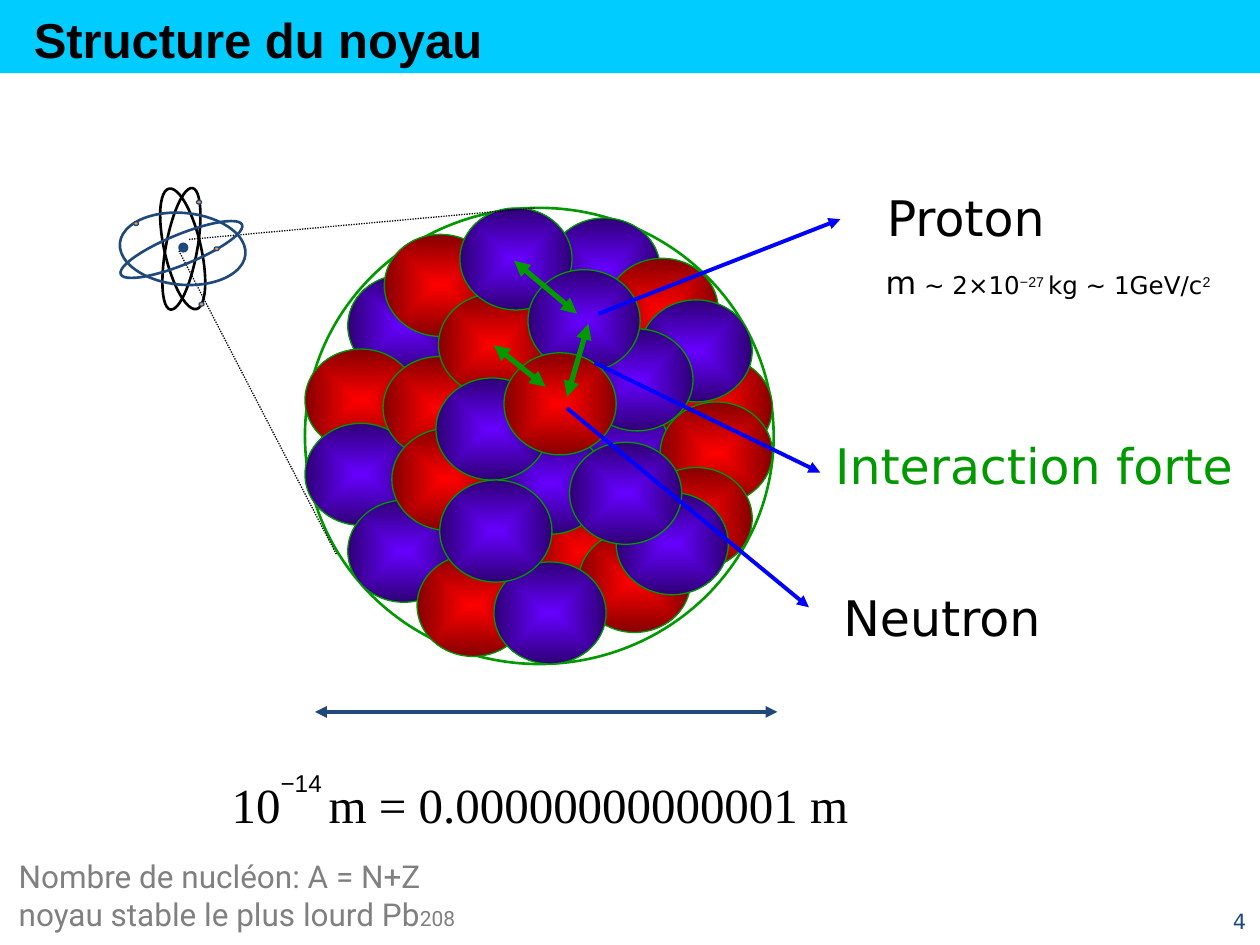
from pptx import Presentation
from pptx.dml.color import RGBColor
from pptx.enum.dml import MSO_LINE
from pptx.enum.shapes import MSO_CONNECTOR, MSO_SHAPE
from pptx.enum.text import MSO_ANCHOR, PP_ALIGN
from pptx.oxml.ns import qn
from pptx.util import Inches, Pt
from lxml import etree

RECT, OVAL, STRAIGHT = MSO_SHAPE.RECTANGLE, MSO_SHAPE.OVAL, MSO_CONNECTOR.STRAIGHT
LEFT, CENTER, RIGHT = PP_ALIGN.LEFT, PP_ALIGN.CENTER, PP_ALIGN.RIGHT
TOP, MIDDLE = MSO_ANCHOR.TOP, MSO_ANCHOR.MIDDLE
DOTTED = MSO_LINE.ROUND_DOT
COLS, ROWS = 100, 75
CELL = Inches(10) // COLS
SANS, ARIAL, SERIF, ROBOTO = "DejaVu Sans", "Arial", "Times New Roman", "Roboto"
COLORS = {
    "banner": "00CCFF", "black": "000000", "navy": "1F497D", "force": "009900",
    "pointer": "0000FF", "electron": "F79646", "grey": "808080",
    "proton": "6600FF", "proton_edge": "2F0076",
    "neutron": "FF0000", "neutron_edge": "860000",
}
NUCLEON = (8.9, 8.1)
NUCLEONS = [
    ("proton", 27.6, 21.8), ("neutron", 24.2, 27.7), ("proton", 24.2, 33.6),
    ("proton", 45.4, 32.6), ("proton", 43.5, 17.3), ("neutron", 30.5, 18.6),
    ("neutron", 30.4, 28.3), ("neutron", 41.9, 39.7), ("neutron", 46.1, 22.9),
    ("neutron", 34.8, 23.3), ("neutron", 52.4, 28.3), ("neutron", 48.1, 20.5),
    ("proton", 36.5, 16.5), ("proton", 50.8, 23.8), ("proton", 27.6, 39.7),
    ("proton", 46.1, 26.1), ("neutron", 31.1, 34), ("neutron", 45.9, 42.1),
    ("neutron", 33.1, 44), ("proton", 39.2, 34.3), ("proton", 39.2, 44.6),
    ("proton", 34.6, 30), ("neutron", 52.4, 31.9), ("neutron", 50.8, 37.1),
    ("proton", 48.9, 39.1), ("proton", 45.2, 35.1), ("proton", 41.9, 21.4),
    ("proton", 34.9, 38.1), ("neutron", 40, 28),
]
ORBITS_BEHIND = [
    ((9.5, 18.5, 9.8, 2.5), 280.3, "black"),
    ((9.6, 18.3, 9.8, 2.9), 257.1, "black"),
    ((9.2, 18.6, 10.4, 2.4), 337.8, "navy"),
]
ORBIT_FRONT = ((9.5, 16.9, 10, 5.7), 5.1, "navy")
ELECTRONS = [(15.6, 15.9), (17, 19.6), (10.6, 17.6), (15.8, 24)]
ZOOM_LINES = [((14.2, 19.9), (26.7, 44)), ((15, 19), (42.5, 16.5))]
FORCES = [((45, 31.5), (46.7, 25.7)), ((39.2, 27.4), (43.3, 30.7)),
          ((40.8, 20.7), (45.8, 24.9))]
POINTERS = [((45, 32.4), (64.2, 48.2)), ((47.5, 24.9), (66.7, 17.4)),
            ((47.2, 28.8), (65.1, 37.5))]
LABELS = [
    ("Neutron", (65.9, 46.1, 17.7, 5.7), "black", CENTER),
    ("Proton", (69.3, 14.4, 14.7, 5.7), "black", CENTER),
    ("Interaction forte", (65.3, 34.1, 34, 5.7), "force", LEFT),
]


def rgb(name):
    """Return the named colour."""
    return RGBColor.from_string(COLORS[name])


def grid(*cells):
    """Convert grid cells to slide lengths."""
    return [round(n * CELL) for n in cells]


def add_shape(s, kind, box, fill=None, line=None, width=0.75, rot=0):
    """Add a preset shape with optional solid fill and outline."""
    sp = s.shapes.add_shape(kind, *grid(*box))
    sp.shadow.inherit = False
    sp.rotation = rot
    if fill:
        sp.fill.solid()
        sp.fill.fore_color.rgb = rgb(fill)
    else:
        sp.fill.background()
    if line:
        sp.line.color.rgb = rgb(line)
        sp.line.width = Pt(width)
    else:
        sp.line.fill.background()
    return sp


def add_nucleon(s, kind, left, top):
    """Add a ball shaded from its centre to its edge."""
    sp = add_shape(s, OVAL, (left, top, *NUCLEON), line="force")
    sp.fill.gradient()
    for stop, name in zip(sp.fill.gradient_stops, (kind, f"{kind}_edge")):
        stop.color.rgb = rgb(name)
    grad = sp._element.spPr.find(qn("a:gradFill"))
    grad.remove(grad.find(qn("a:lin")))
    shade = etree.SubElement(grad, qn("a:path"), {"path": "shape"})
    etree.SubElement(shade, qn("a:fillToRect"), dict.fromkeys("ltrb", "50000"))


def add_line(s, start, end, color, width, dash=None, heads=()):
    """Add a straight line with optional dash and arrowheads."""
    ln = s.shapes.add_connector(STRAIGHT, *grid(*start, *end))
    ln.line.color.rgb = rgb(color)
    ln.line.width = Pt(width)
    if dash:
        ln.line.dash_style = dash
    for head in heads:
        etree.SubElement(ln.line._get_or_add_ln(), qn(f"a:{head}"), type="triangle")
    etree.SubElement(ln._element.spPr, qn("a:effectLst"))


def add_text(s, box, paragraphs, size=28, font=SANS, color="black", bold=False,
             align=LEFT, anchor=TOP, wrap=False, spacing=None):
    """Add paragraphs of (text, format) runs in a text box."""
    tf = s.shapes.add_textbox(*grid(*box)).text_frame
    tf.word_wrap = wrap
    tf.vertical_anchor = anchor
    for i, runs in enumerate(paragraphs):
        p = tf.paragraphs[0] if i == 0 else tf.add_paragraph()
        p.alignment = align
        if spacing:
            p.line_spacing = spacing
        for text, fmt in runs:
            r = p.add_run()
            r.text = text
            r.font.size = Pt(fmt.get("size", size))
            r.font.name = fmt.get("font", font)
            r.font.bold = bold
            r.font.color.rgb = rgb(color)
            if "raised" in fmt:
                r.font._element.set("baseline", str(fmt["raised"] * 1000))


def add_nucleus(s):
    """Draw the enclosing circle and its nucleons."""
    add_shape(s, OVAL, (24.2, 16.5, 37.2, 36.2), line="force", width=1.5)
    for nucleon in NUCLEONS:
        add_nucleon(s, *nucleon)


def add_orbit(s, box, rot, color):
    """Draw one tilted electron orbit."""
    add_shape(s, OVAL, box, line=color, width=1.5, rot=rot)


def add_atom(s):
    """Draw the small atom and the lines that enlarge its core."""
    for start, end in ZOOM_LINES:
        add_line(s, start, end, "black", 0.75, dash=DOTTED)
    for orbit in ORBITS_BEHIND:
        add_orbit(s, *orbit)
    add_shape(s, OVAL, (14.2, 19.3, 0.7, 0.7), fill="navy", line="navy")
    add_orbit(s, *ORBIT_FRONT)
    for left, top in ELECTRONS:
        add_shape(s, OVAL, (left, top, 0.4, 0.3), fill="electron", line="navy")


def add_annotations(s):
    """Draw the arrows and their labels."""
    both = ("headEnd", "tailEnd")
    for start, end in FORCES:
        add_line(s, start, end, "force", 3, heads=both)
    for start, end in POINTERS:
        add_line(s, start, end, "pointer", 2.25, heads=("tailEnd",))
    for text, box, color, align in LABELS:
        add_text(s, box, [[(text, {})]], color=color, align=align)
    add_line(s, (61.7, 56.5), (25, 56.5), "navy", 2.25, heads=both)


def add_formulas(s):
    """Write the nucleus size, the nucleon mass and the nucleon count."""
    add_text(s, (17.4, 58.2, 51.5, 7.8), [[
        ("10", {}), ("−14 ", {"size": 24, "font": ARIAL, "raised": 72}),
        ("m = 0.00000000000001 m", {})]], font=SERIF, spacing=1.45)
    add_text(s, (69.3, 20.4, 28.5, 3.4), [[
        ("m", {"size": 18}), (" ~ 2×10", {}),
        ("−27 ", {"font": ARIAL, "raised": 30}),
        ("kg ~ 1GeV/c", {}), ("2", {"raised": 30, "font": ARIAL})]], size=14)
    add_text(s, (0.5, 67.5, 50, 7.1), [
        [("Nombre de nucléon: A = N+Z", {})],
        [("noyau stable le plus lourd Pb", {}), ("208", {"size": 12})],
    ], size=18, font=ROBOTO, color="grey", wrap=True)


def main():
    """Build and save the slide."""
    prs = Presentation()
    prs.slide_width, prs.slide_height = grid(COLS, ROWS)
    s = prs.slides.add_slide(prs.slide_layouts[6])
    add_shape(s, RECT, (0, 0, COLS, 5.8), fill="banner")
    add_text(s, (1.7, 0.3, 96.3, 5.6), [[("Structure du noyau", {})]],
             font=ARIAL, bold=True, anchor=MIDDLE, wrap=True)
    add_text(s, (93.3, 71.5, 6.6, 3.2), [[("4", {})]], size=12, color="navy",
             align=RIGHT, anchor=MIDDLE, wrap=True)
    add_nucleus(s)
    add_atom(s)
    add_annotations(s)
    add_formulas(s)
    prs.save("out.pptx")


if __name__ == "__main__":
    main()
